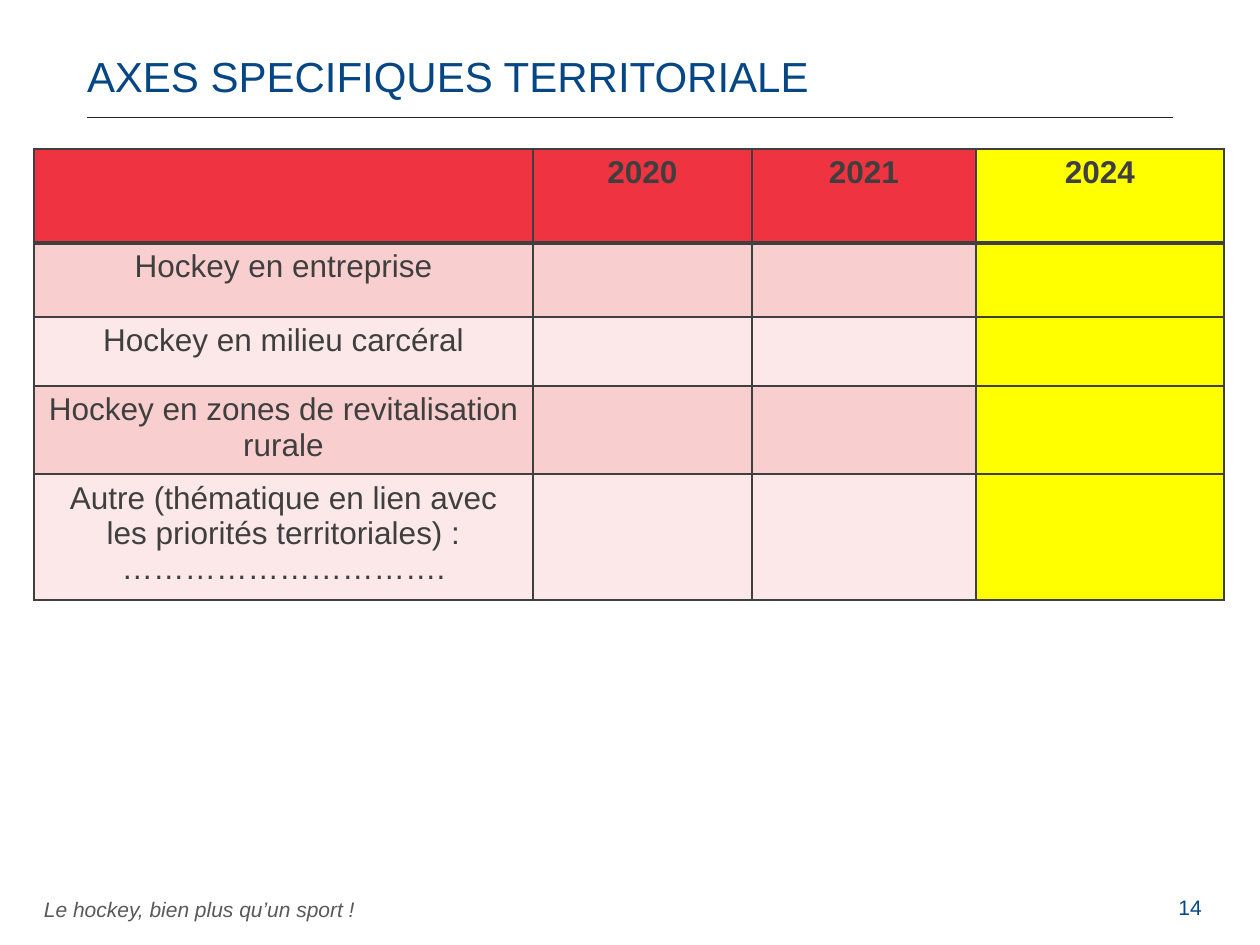
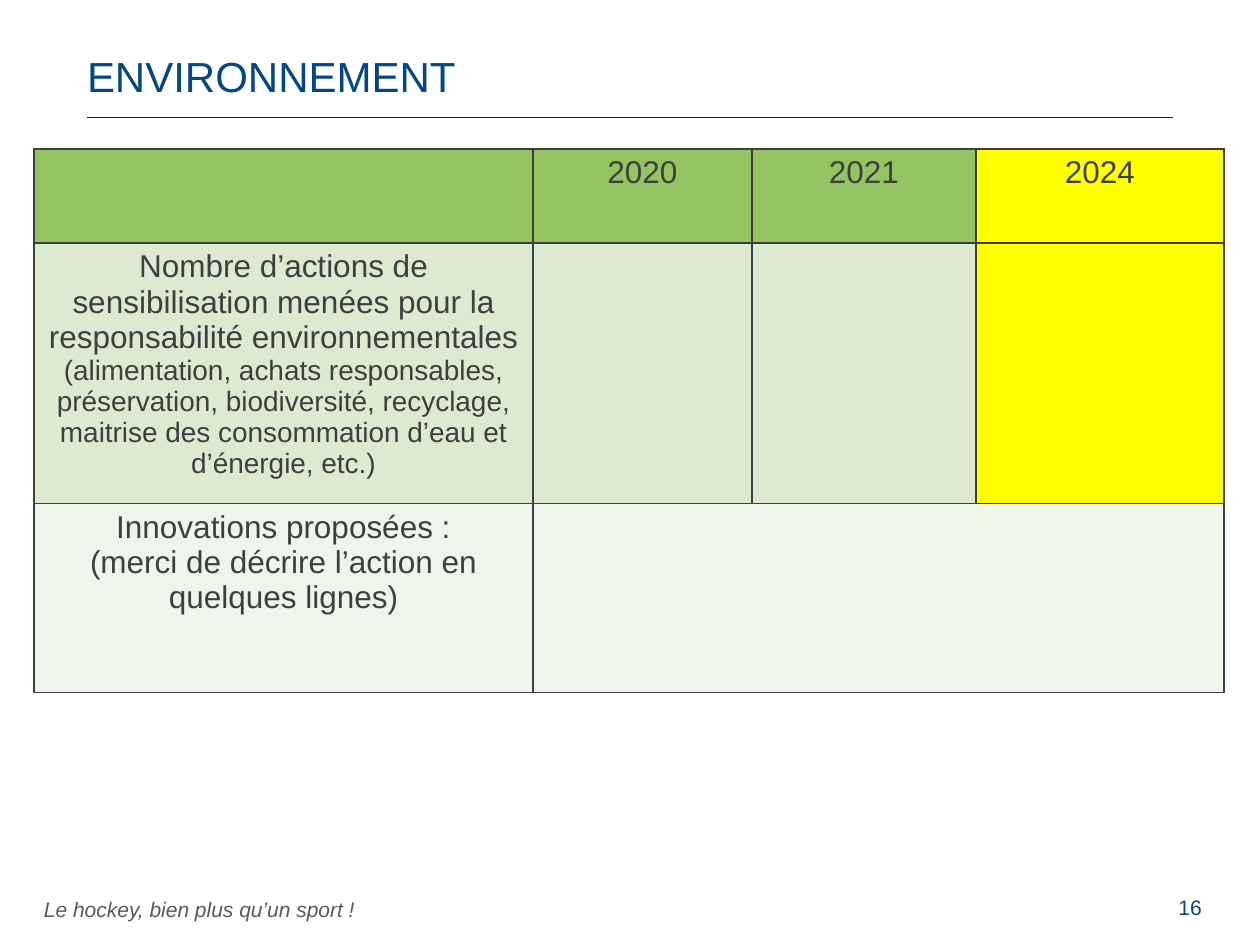
from lxml.etree import SubElement
from pptx import Presentation
from pptx.dml.color import RGBColor
from pptx.enum.shapes import MSO_CONNECTOR
from pptx.enum.text import MSO_ANCHOR, MSO_AUTO_SIZE, PP_ALIGN
from pptx.oxml.ns import qn
from pptx.util import Emu, Pt

PX = 914400 / 126
FONT = "Arial"
BLUE = RGBColor(0x05, 0x46, 0x84)
GREY = RGBColor(0x59, 0x59, 0x59)
DARK = RGBColor(0x3F, 0x3F, 0x3F)
RULE = RGBColor(0x20, 0x20, 0x20)
YELLOW = RGBColor(0xFF, 0xFF, 0x00)
# Each palette: header fill, then the two alternating row fills.
REDS = (RGBColor(0xEF, 0x33, 0x40), RGBColor(0xF9, 0xCE, 0xCF), RGBColor(0xFC, 0xE8, 0xE8))
GREENS = (RGBColor(0x93, 0xC4, 0x61), RGBColor(0xDC, 0xEA, 0xD2), RGBColor(0xEE, 0xF5, 0xEA))

TABLE_LEFT, TABLE_TOP = 34, 149
COLUMN_WIDTHS = (499, 219, 224, 248)
HEADER_HEIGHT = 94
YEARS = ("", "2020", "2021", "2024")
FOOTER = "Le hockey, bien plus qu’un sport !"


def px(*lengths):
    return [Emu(round(length * PX)) for length in lengths]


def style_paragraph(paragraph, size, color, bold=False, italic=False):
    for run in paragraph.runs:
        font = run.font
        font.name, font.size = FONT, Pt(size)
        font.bold, font.italic = bold, italic
        font.color.rgb = color


def set_title(slide, text):
    title = slide.shapes.title
    title.left, title.top, title.width, title.height = px(87, 50, 1086, 66)
    frame = title.text_frame
    frame.text = text
    frame.auto_size = MSO_AUTO_SIZE.NONE
    frame.vertical_anchor = MSO_ANCHOR.TOP
    frame.margin_left = 0
    paragraph = frame.paragraphs[0]
    paragraph.alignment = PP_ALIGN.LEFT
    paragraph.line_spacing = 0.9
    style_paragraph(paragraph, 24, BLUE)


def add_title_rule(slide):
    line = slide.shapes.add_connector(MSO_CONNECTOR.STRAIGHT, *px(87, 117, 1173, 117))
    line.line.color.rgb = RULE
    line.line.width = Pt(0.5)
    SubElement(line._element.spPr, qn("a:effectLst"))


def add_footer(slide, number):
    motto = slide.shapes.add_textbox(*px(44, 897, 340, 25)).text_frame
    motto.text = FOOTER
    motto.word_wrap = True
    motto.vertical_anchor = MSO_ANCHOR.MIDDLE
    motto.margin_left = motto.margin_top = motto.margin_right = motto.margin_bottom = 0
    style_paragraph(motto.paragraphs[0], 12, GREY, italic=True)

    page = slide.shapes.add_textbox(*px(1166, 888, 59, 50)).text_frame
    page.text = str(number)
    page.word_wrap = True
    style_paragraph(page.paragraphs[0], 12, BLUE)


def set_borders(cell, top=1, bottom=1):
    """Draw the four cell borders; widths are in points."""
    properties = cell._tc.get_or_add_tcPr()
    widths = (("a:lnL", 1), ("a:lnR", 1), ("a:lnT", top), ("a:lnB", bottom))
    for index, (tag, width) in enumerate(widths):
        border = SubElement(properties, qn(tag), w=str(Pt(width)))
        fill = SubElement(border, qn("a:solidFill"))
        SubElement(fill, qn("a:srgbClr"), val=str(DARK))
        properties.insert(index, border)


def fill_cell(cell, text, color, sizes, bold):
    cell.fill.solid()
    cell.fill.fore_color.rgb = color
    cell.text_frame.text = text
    for paragraph, size in zip(cell.text_frame.paragraphs, sizes):
        paragraph.alignment = PP_ALIGN.CENTER
        style_paragraph(paragraph, size, DARK, bold)


def add_year_table(slide, rows, palette, bold_header=False, header_rule=1):
    """Add the table of years; each row is (label, height, paragraph sizes)."""
    heights = [HEADER_HEIGHT] + [height for _, height, _ in rows]
    frame = slide.shapes.add_table(
        len(heights), len(COLUMN_WIDTHS),
        *px(TABLE_LEFT, TABLE_TOP, sum(COLUMN_WIDTHS), sum(heights)))
    table = frame.table
    table.first_row = table.horz_banding = False
    for column, width in zip(table.columns, px(*COLUMN_WIDTHS)):
        column.width = width
    for row, height in zip(table.rows, px(*heights)):
        row.height = height

    header_fill, *band_fills = palette
    contents = [(YEARS, (18,))]
    contents += [((label, "", "", ""), sizes) for label, _, sizes in rows]
    for r, (texts, sizes) in enumerate(contents):
        row_fill = band_fills[(r - 1) % 2] if r else header_fill
        for c, text in enumerate(texts):
            cell = table.cell(r, c)
            color = YELLOW if c == len(texts) - 1 else row_fill
            fill_cell(cell, text, color, sizes, bold_header and r == 0)
            set_borders(cell, top=header_rule if r == 1 else 1,
                        bottom=header_rule if r == 0 else 1)
    return table


def add_content_slide(presentation, title, number):
    slide = presentation.slides.add_slide(presentation.slide_layouts[5])
    set_title(slide, title)
    add_title_rule(slide)
    add_footer(slide, number)
    return slide


def main():
    presentation = Presentation()
    presentation.slide_width, presentation.slide_height = px(1260, 945)

    territory = add_content_slide(presentation, "AXES SPECIFIQUES TERRITORIALE", 14)
    add_year_table(territory, [
        ("Hockey en entreprise", 74, (18,)),
        ("Hockey en milieu carcéral", 69, (18,)),
        ("Hockey en zones de revitalisation rurale", 87, (18,)),
        ("Autre (thématique en lien avec les priorités territoriales) : "
         "………………………….", 118, (18,)),
    ], REDS, bold_header=True, header_rule=3)

    environment = add_content_slide(presentation, "ENVIRONNEMENT", 16)
    table = add_year_table(environment, [
        ("Nombre d’actions de sensibilisation menées pour la responsabilité "
         "environnementales\n(alimentation, achats responsables, préservation, "
         "biodiversité, recyclage, maitrise des consommation d’eau et d’énergie, etc.)",
         243, (18, 16)),
        ("Innovations proposées :\n(merci de décrire l’action en quelques lignes)",
         189, (18, 18)),
    ], GREENS)
    table.cell(2, 1).merge(table.cell(2, 3))

    presentation.save("out.pptx")


if __name__ == "__main__":
    main()
